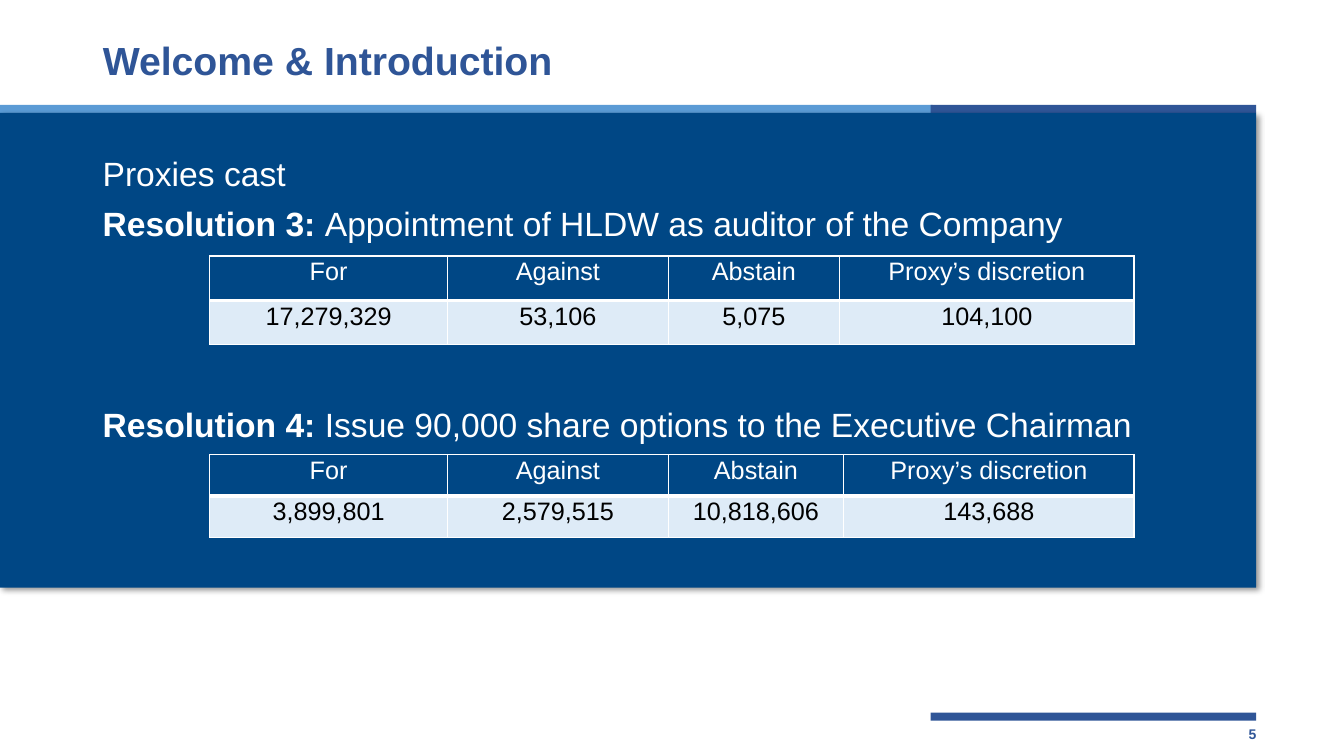
import pptx
import pptx.dml.color
import pptx.enum.shapes
import pptx.enum.text
import pptx.oxml
import pptx.oxml.ns
import pptx.util

Pt = pptx.util.Pt
ALIGN = pptx.enum.text.PP_ALIGN
ANCHOR = pptx.enum.text.MSO_ANCHOR
WIDTH, HEIGHT = pptx.util.Inches(13.33), pptx.util.Inches(7.5)
COLORS = {"white": "FFFFFF", "black": "000000", "sky": "5B9BD5",
          "royal": "2F5597", "navy": "004785", "pale": "DEEBF7"}
NAMESPACE = pptx.oxml.ns.nsdecls("a")

# Grid of 100 columns by 100 rows; text and bars share these lines
MARGIN = 6.9
ACCENT_LEFT, ACCENT_WIDTH, BAR_HEIGHT = 69.24, 24.23, 1.07
TABLE_LEFT = 15.6
HEADINGS = ["For", "Against", "Abstain", "Proxy’s discretion"]


def across(columns):
    return round(WIDTH * columns / 100)


def down(rows):
    return round(HEIGHT * rows / 100)


def place(left, top, width, height):
    return across(left), down(top), across(width), down(height)


def color(name):
    return pptx.dml.color.RGBColor.from_string(COLORS[name])


def write(frame, text, size=24, ink="white", bold=False, align=ALIGN.LEFT,
          spacing=None, before=0, lead=""):
    """Add one paragraph, with an optional bold lead-in."""
    para = frame.paragraphs[0]
    if para.runs:
        para = frame.add_paragraph()
    para.alignment = align
    para.space_before = Pt(before)
    if spacing:
        para.line_spacing = spacing
    for words, heavy in ((lead, True), (text, bold)):
        if words:
            span = para.add_run()
            span.text = words
            span.font.name = "Arial"
            span.font.size = Pt(size)
            span.font.bold = heavy
            span.font.color.rgb = color(ink)


def add_block(page, area, fill, shadow=False):
    block = page.shapes.add_shape(pptx.enum.shapes.MSO_SHAPE.RECTANGLE, *place(*area))
    block.shadow.inherit = False
    block.fill.solid()
    block.fill.fore_color.rgb = color(fill)
    block.line.fill.background()
    if shadow:
        effects = block._element.spPr.find(pptx.oxml.ns.qn("a:effectLst"))
        effects.append(pptx.oxml.parse_xml(
            f'<a:outerShdw {NAMESPACE} blurRad="{Pt(4)}" dist="{Pt(3)}" dir="2700000">'
            f'<a:srgbClr val="{COLORS["black"]}"><a:alpha val="40000"/></a:srgbClr>'
            '</a:outerShdw>'))


def add_text(page, area):
    box = page.shapes.add_textbox(*place(*area))
    box.text_frame.word_wrap = True
    return box.text_frame


def set_borders(cell, **widths):
    properties = cell._tc.get_or_add_tcPr()
    for index, side in enumerate("LRTB"):
        properties.insert(index, pptx.oxml.parse_xml(
            f'<a:ln{side} {NAMESPACE} w="{Pt(widths.get(side, 1))}"><a:solidFill>'
            f'<a:srgbClr val="{COLORS["white"]}"/></a:solidFill></a:ln{side}>'))


def add_votes(page, top, row_height, columns, votes):
    area = place(TABLE_LEFT, top, sum(columns), 2 * row_height)
    table = page.shapes.add_table(2, len(columns), *area).table
    for column, width in zip(table.columns, columns):
        column.width = across(width)
    styles = ((HEADINGS, "navy", "white", {"B": 3}), (votes, "pale", "black", {"T": 3}))
    for row, (texts, fill, ink, borders) in enumerate(styles):
        table.rows[row].height = down(row_height)
        for column, text in enumerate(texts):
            cell = table.cell(row, column)
            cell.margin_left = cell.margin_right = pptx.util.Inches(0.07)
            cell.margin_top = cell.margin_bottom = 0
            cell.fill.solid()
            cell.fill.fore_color.rgb = color(fill)
            set_borders(cell, **borders)
            write(cell.text_frame, text, size=18, ink=ink, align=ALIGN.CENTER, spacing=1.07)


def main():
    deck = pptx.Presentation()
    deck.slide_width, deck.slide_height = WIDTH, HEIGHT
    page = deck.slides.add_slide(deck.slide_layouts[5])

    # Bars and page number
    add_block(page, (0, 13.87, 69.39, BAR_HEIGHT), "sky")
    for top in (13.87, 94.27):
        add_block(page, (ACCENT_LEFT, top, ACCENT_WIDTH, BAR_HEIGHT), "royal")
    number = add_text(page, (72.39, 95.33, 21.83, 3.6))
    write(number, "5", size=10, ink="royal", bold=True, align=ALIGN.RIGHT)

    # Title
    title = page.shapes.title
    title.left, title.top, title.width, title.height = place(MARGIN, 4.27, 59.49, 8.13)
    title.text_frame.vertical_anchor = ANCHOR.MIDDLE
    write(title.text_frame, "Welcome & Introduction", size=28, ink="royal",
          bold=True, spacing=0.9)

    # Panel with the resolutions
    add_block(page, (0, 14.93, 93.47, 62.8), "navy", shadow=True)
    body = add_text(page, (MARGIN, 20.13, 86.27, 63.47))
    write(body, "Proxies cast", spacing=0.9)
    write(body, "Appointment of HLDW as auditor of the Company",
          lead="Resolution 3: ", spacing=0.9, before=10)
    write(body, "Issue 90,000 share options to the Executive Chairman",
          lead="Resolution 4: ", spacing=0.9, before=118)

    # Votes per resolution
    add_votes(page, 33.87, 5.87, (17.7, 16.43, 12.75, 21.91),
              ["17,279,329", "53,106", "5,075", "104,100"])
    add_votes(page, 60.13, 5.47, (17.7, 16.43, 13.05, 21.61),
              ["3,899,801", "2,579,515", "10,818,606", "143,688"])

    deck.save("out.pptx")


if __name__ == "__main__":
    main()
